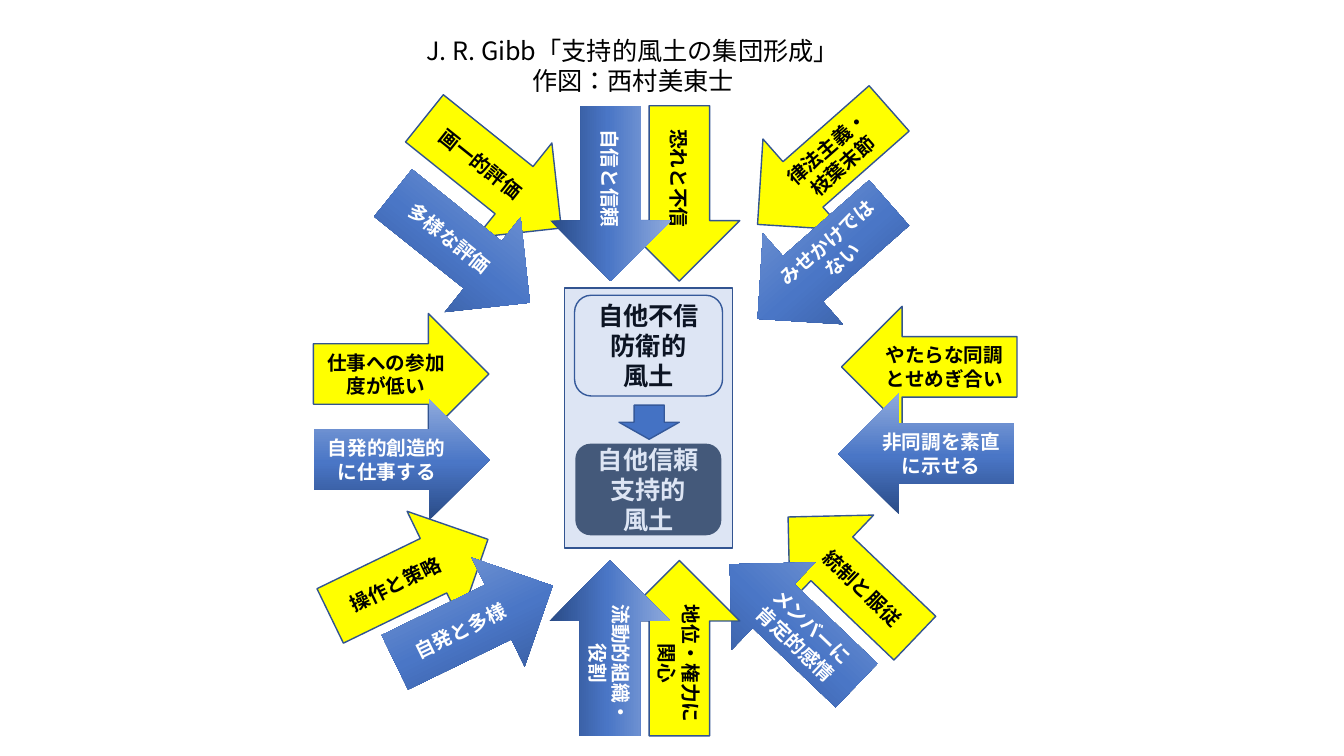
"""Build a slide on defensive and supportive group climates after J. R. Gibb."""
from lxml.etree import SubElement
from pptx import Presentation
from pptx.dml.color import RGBColor
from pptx.enum.lang import MSO_LANGUAGE_ID as Language
from pptx.enum.shapes import MSO_SHAPE as Preset
from pptx.enum.text import MSO_ANCHOR as Anchor, MSO_AUTO_SIZE as AutoSize, PP_ALIGN as Align
from pptx.oxml import parse_xml
from pptx.oxml.ns import nsdecls, qn
from pptx.util import Cm, Pt

FONT = "Noto Sans CJK JP"
COLORS = {
    "black": "000000", "white": "FFFFFF", "yellow": "FFFF00", "blue": "4472C4",
    "outline": "325491", "slate": "44546A",
    "dark": "2A4B86", "middle": "4A76C6", "light": "8FAADC",
}
ARROW_WIDTH, ARROW_HEIGHT = 4.42, 3.05


def write_text(shape, text, *, size=14, color="black", bold=True, anchor=Anchor.MIDDLE):
    frame = shape.text_frame
    frame.word_wrap = True
    frame.vertical_anchor = anchor
    frame.text = text
    for paragraph in frame.paragraphs:
        paragraph.alignment = Align.CENTER
        for run in paragraph.runs:
            font = run.font
            font.name, font.size, font.bold = FONT, Pt(size), bold
            font.color.rgb = RGBColor.from_string(COLORS[color])
            font.language_id = Language.JAPANESE
            SubElement(run._r.get_or_add_rPr(), qn("a:ea"), typeface=FONT)


def add_box(preset, left, top, width, height, fill=None, outlined=True):
    shape = slide.shapes.add_shape(preset, Cm(left), Cm(top), Cm(width), Cm(height))
    shape.shadow.inherit = False
    if fill:
        shape.fill.solid()
        shape.fill.fore_color.rgb = RGBColor.from_string(COLORS[fill])
    else:
        shape.fill.background()
    if outlined:
        shape.line.color.rgb = RGBColor.from_string(COLORS["outline"])
        shape.line.width = Pt(1)
    else:
        shape.line.fill.background()
    return shape


presentation = Presentation()
presentation.slide_width, presentation.slide_height = Cm(33.87), Cm(19.05)
slide = presentation.slides.add_slide(presentation.slide_layouts[6])

title = slide.shapes.add_textbox(Cm(9.75), Cm(0.76), Cm(12.4), Cm(1.8))
write_text(title, "J. R. Gibb「支持的風土の集団形成」\n作図：西村美東士",
           size=18, bold=False, anchor=Anchor.TOP)
title.text_frame.auto_size = AutoSize.SHAPE_TO_FIT_TEXT

defensive = add_box(Preset.ROUNDED_RECTANGLE, 14.48, 7.44, 3.73, 2.54)
write_text(defensive, "自他不信防衛的\n風土", size=18)
supportive = add_box(Preset.ROUNDED_RECTANGLE, 14.5, 11.18, 3.68, 2.31, "slate", False)
write_text(supportive, "自他信頼支持的\n風土", size=18, color="white")

# Each pair: rotation, flip, defensive arrow, supportive arrow
arrow_pairs = [
    (0, None, (7.9, 7.9, "仕事への参加度が低い"), (7.92, 10.06, "自発的創造的に仕事する")),
    (38.7, None, (10.21, 2.84, "画一的評価"), (9.42, 4.72, "多様な評価")),
    (90, None, (14.91, 3.35, "恐れと不信"), (13.18, 3.35, "自信と信頼")),
    (0, "flipH", (21.21, 7.72, "やたらな同調とせめぎ合い"), (21.13, 9.91, "非同調を素直に示せる")),
    (318.6, "flipH", (18.54, 2.67, "律法主義・\n枝葉末節"), (18.54, 5.05, "みせかけではない")),
    (43.7, "flipH", (19.25, 13.03, "統制と服従"), (17.78, 14.22, "メンバーに\v肯定的感情")),
    (270, "flipV", (14.91, 14.81, "地位・権力に関心"), (13.16, 14.81, "流動的組織・役割")),
    (334.1, None, (8.1, 13.03, "操作と策略"), (9.73, 14.2, "自発と多様")),
]
gradient_stops = "".join(
    f'<a:gs pos="{position * 1000}"><a:srgbClr val="{COLORS[name]}"/></a:gs>'
    for position, name in [(0, "dark"), (48, "middle"), (100, "light")]
)
gradient_xml = (
    f'<a:gradFill {nsdecls("a")} rotWithShape="1"><a:gsLst>{gradient_stops}</a:gsLst>'
    '<a:lin ang="16200000" scaled="1"/></a:gradFill>'
)
for rotation, flip, *pair in arrow_pairs:
    for is_supportive, (left, top, text) in enumerate(pair):
        arrow = add_box(Preset.RIGHT_ARROW, left, top, ARROW_WIDTH, ARROW_HEIGHT,
                        "blue" if is_supportive else "yellow", not is_supportive)
        arrow.rotation = rotation
        properties = arrow._element.spPr
        if flip:
            properties.find(qn("a:xfrm")).set(flip, "1")
        if is_supportive:
            properties.replace(properties.find(qn("a:solidFill")), parse_xml(gradient_xml))
        write_text(arrow, text, color="white" if is_supportive else "black")

add_box(Preset.DOWN_ARROW, 15.6, 10.21, 1.52, 0.86, "blue")

center_panel = add_box(Preset.RECTANGLE, 14.22, 7.26, 4.24, 6.55, "blue")
panel_color = center_panel._element.spPr.find(qn("a:solidFill"))[0]
SubElement(panel_color, qn("a:alpha"), val="18000")

presentation.save("out.pptx")
